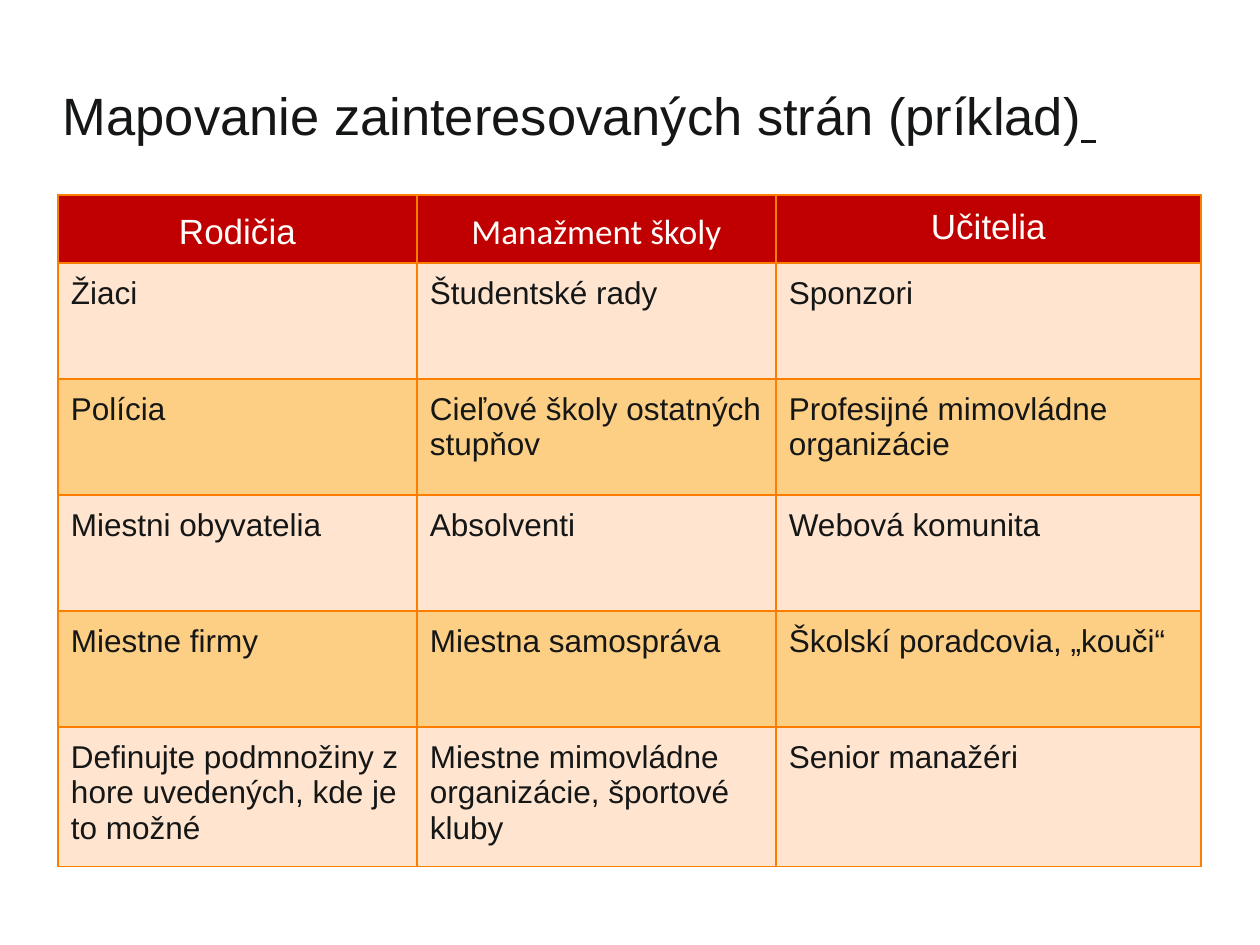
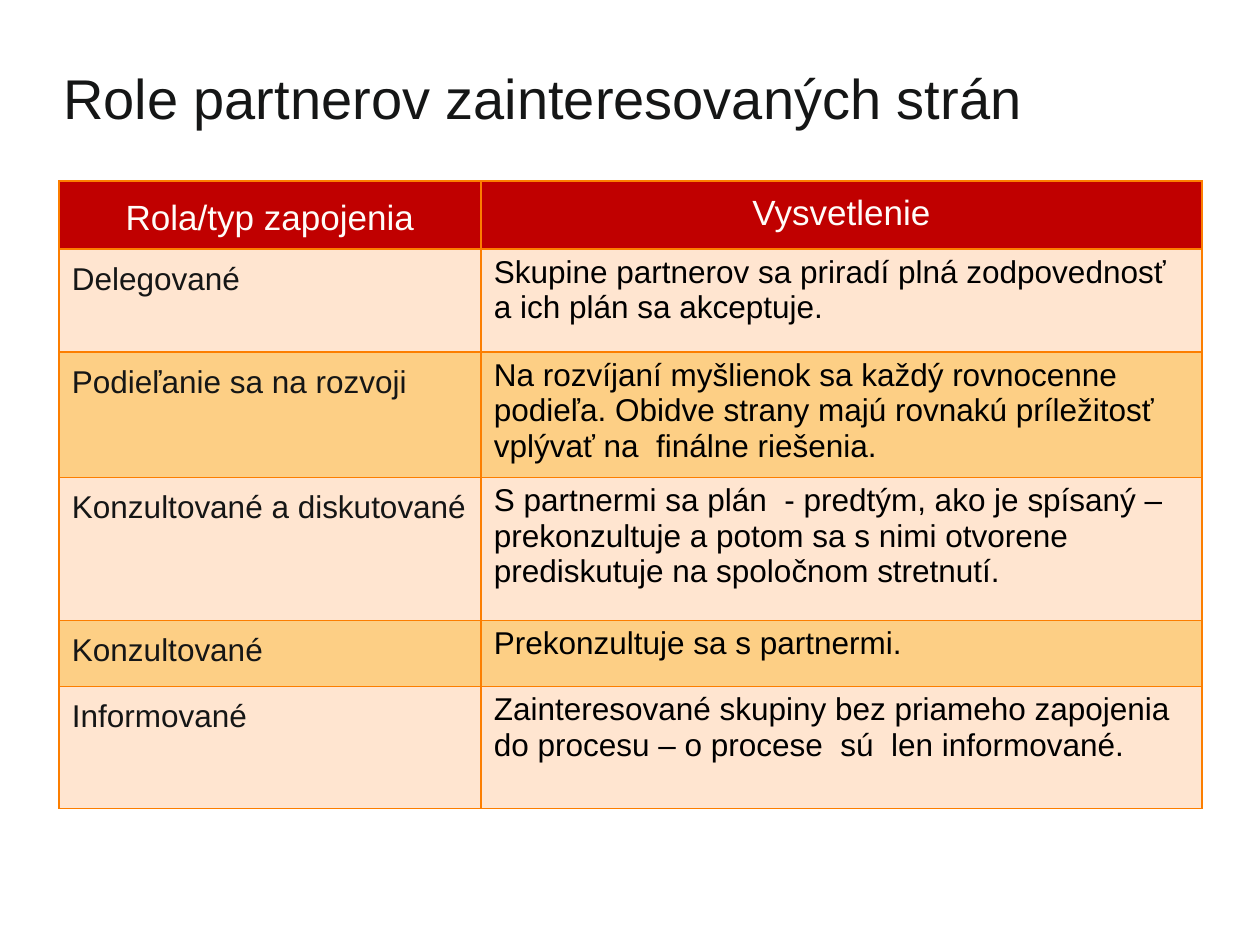
from lxml import etree
from pptx import Presentation
from pptx import util as u
from pptx.dml.color import RGBColor
from pptx.enum import text
from pptx.oxml.ns import qn

PX = 914400 / 126
INK = RGBColor(0x15, 0x16, 0x16)
BLACK = RGBColor(0, 0, 0)
HEADER_INK = RGBColor(0xFF, 0xFC, 0xF9)
RED = RGBColor(0xC0, 0, 0)
PALE = RGBColor(0xFF, 0xE5, 0xD0)
AMBER = RGBColor(0xFD, 0xCF, 0x85)
ORANGE = RGBColor(0xFC, 0x7E, 0x00)

# Body columns: (ink, top and bottom margin in px)
ROOMY, TIGHT = (INK, 13), (BLACK, 6)

SLIDES = [
    {
        "title": "Mapovanie zainteresovaných strán (príklad)",
        "underlined_tail": " ",
        "title_size": 30,
        "title_box": (50, 70, 1157, 94),
        "corner": (58, 195),
        "columns": (359, 359, 425),
        "heights": (68, 116, 116, 116, 116, 131),
        "column_styles": (ROOMY, ROOMY, ROOMY),
        "header_fonts": ("Arial", "Calibri", "Arial"),
        "rows": [
            ("Rodičia", "Manažment školy", "Učitelia"),
            ("Žiaci", "Študentské rady", "Sponzori"),
            ("Polícia", "Cieľové školy ostatných stupňov",
             "Profesijné mimovládne organizácie"),
            ("Miestni obyvatelia", "Absolventi", "Webová komunita"),
            ("Miestne firmy", "Miestna samospráva",
             "Školskí poradcovia, „kouči“"),
            ("Definujte podmnožiny z hore uvedených, kde je to možné",
             "Miestne mimovládne organizácie, športové kluby",
             "Senior manažéri"),
        ],
    },
    {
        "title": "Role partnerov zainteresovaných strán",
        "underlined_tail": "",
        "title_size": 32,
        "title_box": (50, 50, 1153, 110),
        "corner": (59, 181),
        "columns": (422, 721),
        "heights": (65, 103, 122, 143, 66, 122),
        "column_styles": (ROOMY, TIGHT),
        "header_fonts": ("Arial", "Arial"),
        "rows": [
            ("Rola/typ zapojenia", "Vysvetlenie"),
            ("Delegované",
             "Skupine partnerov sa priradí plná zodpovednosť a ich plán sa "
             "akceptuje."),
            ("Podieľanie sa na rozvoji",
             "Na rozvíjaní myšlienok sa každý rovnocenne podieľa. Obidve "
             "strany majú rovnakú príležitosť vplývať na  finálne riešenia."),
            ("Konzultované a diskutované",
             "S partnermi sa plán  - predtým, ako je spísaný – prekonzultuje "
             "a potom sa s nimi otvorene prediskutuje na spoločnom stretnutí."),
            ("Konzultované", "Prekonzultuje sa s partnermi."),
            ("Informované",
             "Zainteresované skupiny bez priameho zapojenia do procesu – "
             "o procese  sú  len informované."),
        ],
    },
]


def px(length):
    return u.Emu(round(length * PX))


def set_all(target, values):
    for name, value in values.items():
        setattr(target, name, value)


def add_run(paragraph, words, size, ink, face="Arial", underline=None):
    run = paragraph.add_run()
    run.text = words
    set_all(run.font, {"size": u.Pt(size), "name": face, "bold": False,
                       "underline": underline})
    run.font.color.rgb = ink


def add_borders(cell):
    properties = cell._tc.get_or_add_tcPr()
    for position, side in enumerate(("lnL", "lnR", "lnT", "lnB")):
        line = etree.Element(qn(f"a:{side}"), w=str(u.Pt(1)))
        fill = etree.SubElement(line, qn("a:solidFill"))
        etree.SubElement(fill, qn("a:srgbClr"), val=str(ORANGE))
        properties.insert(position, line)


def add_title(slide, content):
    frame = slide.shapes.add_textbox(*map(px, content["title_box"])).text_frame
    frame.word_wrap = True
    set_all(frame, dict.fromkeys(
        ("margin_left", "margin_top", "margin_right", "margin_bottom"), px(13)))
    heading = frame.paragraphs[0]
    add_run(heading, content["title"], content["title_size"], INK)
    if content["underlined_tail"]:
        add_run(heading, content["underlined_tail"], content["title_size"],
                INK, underline=True)


def format_header(cell, words, face, is_last):
    """The last header sits at the top of its cell, the others in the middle."""
    margin = px(13 if is_last else 0)
    set_all(cell, dict.fromkeys(
        ("margin_left", "margin_top", "margin_right", "margin_bottom"), margin))
    paragraph = cell.text_frame.paragraphs[0]
    paragraph.alignment = text.PP_ALIGN.CENTER
    if not is_last:
        cell.vertical_anchor = text.MSO_ANCHOR.MIDDLE
        paragraph.line_spacing = 1.15
    add_run(paragraph, words, 20, HEADER_INK, face)


def format_body(cell, words, ink, margin):
    set_all(cell, {"margin_left": px(13), "margin_right": px(13),
                   "margin_top": px(margin), "margin_bottom": px(margin)})
    add_run(cell.text_frame.paragraphs[0], words, 18, ink)


def add_grid(slide, content):
    rows, columns, heights = (content[k] for k in ("rows", "columns", "heights"))
    table = slide.shapes.add_table(
        len(rows), len(columns), *map(px, content["corner"]),
        px(sum(columns)), px(sum(heights))).table
    set_all(table, {"first_row": False, "horz_banding": False})
    for column, width in zip(table.columns, columns):
        column.width = px(width)
    for r, (row, height) in enumerate(zip(rows, heights)):
        table.rows[r].height = px(height)
        for c, words in enumerate(row):
            cell = table.cell(r, c)
            cell.fill.solid()
            if r == 0:
                cell.fill.fore_color.rgb = RED
                format_header(cell, words, content["header_fonts"][c],
                              c == len(columns) - 1)
            else:
                cell.fill.fore_color.rgb = PALE if r % 2 else AMBER
                format_body(cell, words, *content["column_styles"][c])
            add_borders(cell)


def main():
    deck = Presentation()
    set_all(deck, {"slide_width": px(1260), "slide_height": px(945)})
    for content in SLIDES:
        slide = deck.slides.add_slide(deck.slide_layouts[6])
        add_title(slide, content)
        add_grid(slide, content)
    deck.save("out.pptx")


if __name__ == "__main__":
    main()
